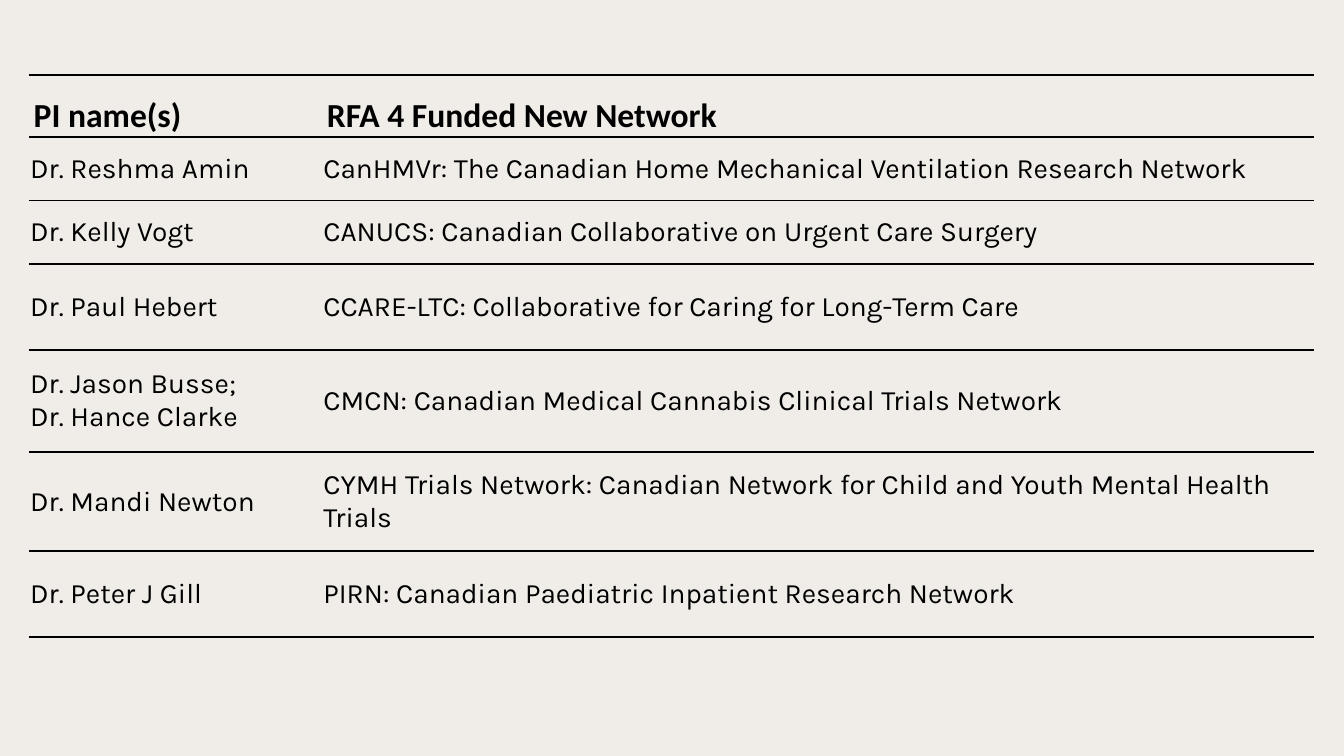
from lxml.etree import SubElement
from pptx import Presentation
from pptx.dml.color import RGBColor
from pptx.enum.text import MSO_ANCHOR
from pptx.oxml.ns import qn
from pptx.util import Cm, Pt

# Content: row height in cm, then the two cells
ROWS = [
    (1.55, "PI name(s)", "RFA 4 Funded New Network"),
    (1.6, "Dr. Reshma Amin",
     "CanHMVr: The Canadian Home Mechanical Ventilation Research Network"),
    (1.6, "Dr. Kelly Vogt",
     "CANUCS: Canadian Collaborative on Urgent Care Surgery"),
    (2.16, "Dr. Paul Hebert",
     "CCARE-LTC: Collaborative for Caring for Long-Term Care"),
    (2.57, "Dr. Jason Busse;\nDr. Hance Clarke",
     "CMCN: Canadian Medical Cannabis Clinical Trials Network"),
    (2.51, "Dr. Mandi Newton",
     "CYMH Trials Network: Canadian Network for Child and Youth Mental "
     "Health Trials"),
    (2.16, "Dr. Peter J Gill",
     "PIRN: Canadian Paediatric Inpatient Research Network"),
]
COLS = (7.39, 24.99)
LEFT, TOP = 0.74, 1.9
INK, PAPER = "000000", "F0EDE8"
RULE, THIN = 1.5, 1
THIN_ROW = 1  # the row with a thin rule below it

# Formats
HEAD = {
    "font": {"name": "Calibri", "size": Pt(24), "bold": True},
    "cell": {"vertical_anchor": MSO_ANCHOR.BOTTOM,
             "margin_left": Cm(0.11), "margin_right": Cm(0.11),
             "margin_top": 0, "margin_bottom": 0},
    "para": {"line_spacing": 1.07},
}
BODY = {
    "font": {"name": "Karla", "size": Pt(20), "bold": False},
    "cell": {"vertical_anchor": MSO_ANCHOR.MIDDLE,
             "margin_left": Cm(0.02), "margin_right": Cm(0.02),
             "margin_top": Cm(0.02), "margin_bottom": 0},
    "para": {},
}
FLAGS = {"first_row": False, "horz_banding": False}


def color(code):
    return RGBColor.from_string(code)


def apply(item, values):
    for key, value in values.items():
        setattr(item, key, value)


def border(cell, widths):
    """Draw the cell's edges; a width of 0 means no line."""
    props = cell._tc.get_or_add_tcPr()
    for side, width in widths.items():
        line = SubElement(props, qn(f"a:ln{side}"), w=str(Pt(width)))
        if width:
            fill = SubElement(line, qn("a:solidFill"))
            SubElement(fill, qn("a:srgbClr"), val=INK)
        else:
            SubElement(line, qn("a:noFill"))
    SubElement(props, qn("a:noFill"))


def write(cell, text, style):
    apply(cell, style["cell"])
    cell.text = text
    for para in cell.text_frame.paragraphs:
        apply(para, style["para"])
        for run in para.runs:
            apply(run.font, style["font"])
            run.font.color.rgb = color(INK)


def weight(row):
    return THIN if row == THIN_ROW else RULE


def main():
    # Slide
    deck = Presentation()
    apply(deck, {"slide_width": Cm(33.87), "slide_height": Cm(19.05)})
    slide = deck.slides.add_slide(deck.slide_layouts[6])
    back = slide.background.fill
    back.solid()
    back.fore_color.rgb = color(PAPER)

    # Table frame
    tall = sum(row[0] for row in ROWS)
    table = slide.shapes.add_table(
        len(ROWS), len(COLS), Cm(LEFT), Cm(TOP), Cm(sum(COLS)), Cm(tall)
    ).table
    apply(table, FLAGS)
    for col, width in zip(table.columns, COLS):
        col.width = Cm(width)

    # Rows
    for r, (height, *texts) in enumerate(ROWS):
        table.rows[r].height = Cm(height)
        for c, text in enumerate(texts):
            cell = table.cell(r, c)
            write(cell, text, BODY if r else HEAD)
            border(cell, {"L": 0, "R": 0, "T": weight(r - 1), "B": weight(r)})

    deck.save("out.pptx")


if __name__ == "__main__":
    main()
